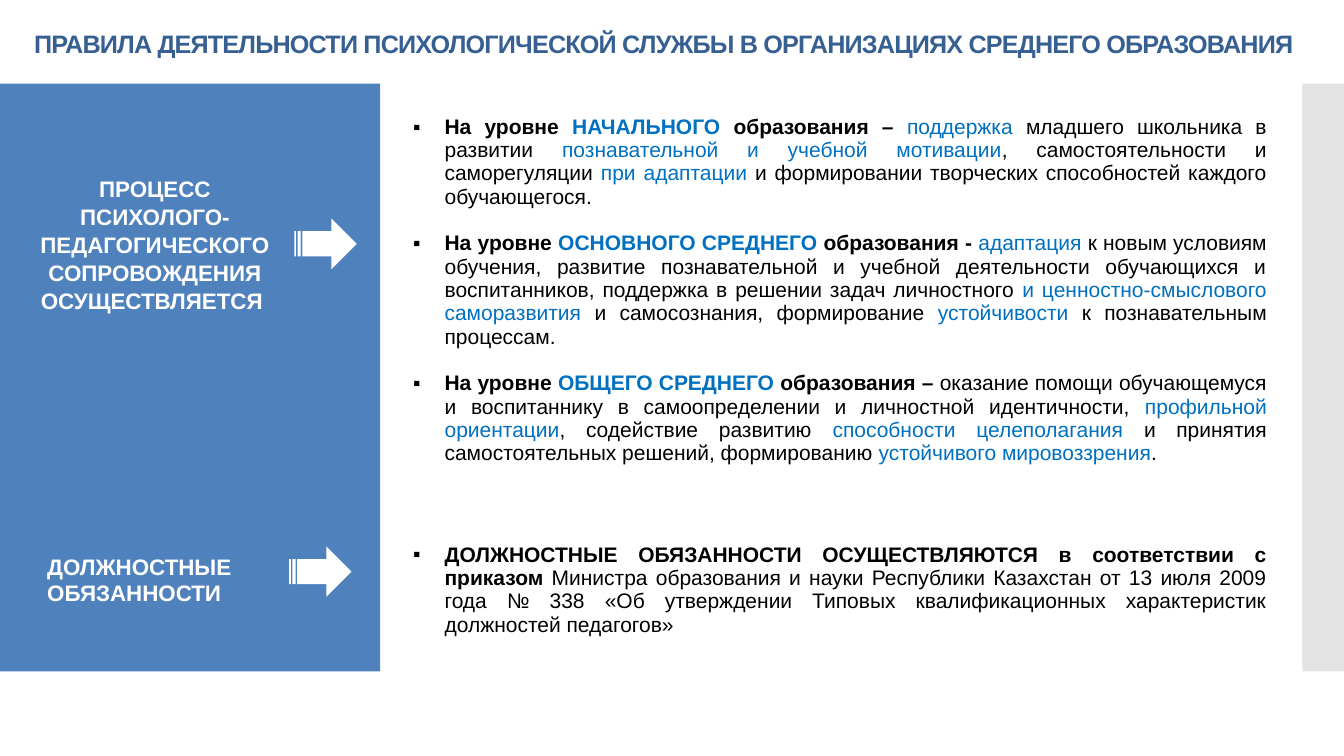
from dataclasses import dataclass

from lxml import etree
from pptx import Presentation
from pptx.dml.color import RGBColor
from pptx.enum.shapes import MSO_SHAPE
from pptx.enum.text import MSO_ANCHOR, MSO_AUTO_SIZE, PP_ALIGN
from pptx.oxml.ns import qn
from pptx.util import Cm, Pt

RECT = MSO_SHAPE.RECTANGLE
ARROW = MSO_SHAPE.STRIPED_RIGHT_ARROW
MIDDLE = MSO_ANCHOR.MIDDLE
NO_FIT = MSO_AUTO_SIZE.NONE
LEFT, CENTER, JUSTIFY = PP_ALIGN.LEFT, PP_ALIGN.CENTER, PP_ALIGN.JUSTIFY
TITLE_ONLY = 5


@dataclass(frozen=True)
class Theme:
    """Colours and type sizes of the slide."""
    font: str = "Arial"
    title: str = "376092"
    panel: str = "4F81BD"
    strip: str = "C8C8C8"
    white: str = "FFFFFF"
    ink: str = "000000"
    accent: str = "0070C0"
    title_size: float = 18
    label_size: float = 16
    body_size: float = 15


THEME = Theme()

TITLE = "ПРАВИЛА ДЕЯТЕЛЬНОСТИ ПСИХОЛОГИЧЕСКОЙ СЛУЖБЫ В ОРГАНИЗАЦИЯХ СРЕДНЕГО ОБРАЗОВАНИЯ"

LABELS = [
    ("ПРОЦЕСС ПСИХОЛОГО-ПЕДАГОГИЧЕСКОГО СОПРОВОЖДЕНИЯ ОСУЩЕСТВЛЯЕТСЯ ",
     (0.41, 1.88, 6.99, 4.32), CENTER, 1.05, (7.42, 3.4)),
    ("ДОЛЖНОСТНЫЕ ОБЯЗАННОСТИ",
     (0.94, 11.86, 5.72, 1.27), LEFT, 1.0, (7.29, 11.66)),
]

PLAIN, BLUE = (THEME.ink, False), (THEME.accent, False)
BOLD, KEY = (THEME.ink, True), (THEME.accent, True)

LEVELS = [
    [("На уровне ", BOLD), ("НАЧАЛЬНОГО", KEY), (" образования – ", BOLD),
     ("поддержка", BLUE), (" младшего школьника в развитии ", PLAIN),
     ("познавательной и учебной мотивации", BLUE),
     (", самостоятельности и саморегуляции ", PLAIN), ("при адаптации ", BLUE),
     ("и формировании творческих способностей каждого обучающегося.", PLAIN)],
    [("На уровне ", BOLD), ("ОСНОВНОГО СРЕДНЕГО ", KEY), ("образования - ", BOLD),
     ("адаптация", BLUE),
     (" к новым условиям обучения, развитие познавательной и учебной деятельности "
      "обучающихся и воспитанников, поддержка в решении задач личностного ", PLAIN),
     ("и ценностно-смыслового саморазвития ", BLUE),
     ("и самосознания, формирование ", PLAIN), ("устойчивости", BLUE),
     (" к познавательным процессам.", PLAIN)],
    [("На уровне ", BOLD), ("ОБЩЕГО СРЕДНЕГО ", KEY), ("образования – ", BOLD),
     ("оказание помощи обучающемуся и воспитаннику в самоопределении "
      "и личностной идентичности, ", PLAIN),
     ("профильной ориентации", BLUE), (", содействие развитию ", PLAIN),
     ("способности целеполагания ", BLUE),
     ("и принятия самостоятельных решений, формированию ", PLAIN),
     ("устойчивого мировоззрения", BLUE), (".", PLAIN)],
]
DUTIES = [
    [("ДОЛЖНОСТНЫЕ ОБЯЗАННОСТИ ОСУЩЕСТВЛЯЮТСЯ в соответствии с приказом ", BOLD),
     ("Министра образования и науки Республики Казахстан от 13 июля 2009 года № 338 "
      "«Об утверждении Типовых квалификационных характеристик должностей педагогов»",
      PLAIN)],
]
ROWS = [(10.31, LEVELS), (4.78, DUTIES)]


def style(run, size, color, bold):
    """Set the face, size, colour and weight of a run."""
    font = run.font
    font.name, font.size, font.bold = THEME.font, Pt(size), bold
    font.color.rgb = RGBColor.from_string(color)


def block(slide, kind, box, color):
    """Add a flat shape without line or shadow."""
    shape = slide.shapes.add_shape(kind, *map(Cm, box))
    shape.shadow.inherit = False
    shape.fill.solid()
    shape.fill.fore_color.rgb = RGBColor.from_string(color)
    shape.line.fill.background()
    return shape


def head(slide, box):
    """Place the title."""
    title = slide.shapes.title
    title.left, title.top, title.width, title.height = map(Cm, box)
    frame = title.text_frame
    frame.text = TITLE
    frame.word_wrap, frame.auto_size = True, NO_FIT
    frame.vertical_anchor = MIDDLE
    frame.margin_left = frame.margin_right = frame.margin_top = frame.margin_bottom = 0
    line = frame.paragraphs[0]
    line.alignment = CENTER
    run = line.runs[0]
    style(run, THEME.title_size, THEME.title, True)
    run.font._element.set("spc", "-60")


def side(slide, box):
    """Draw the left panel with its labels and arrows."""
    block(slide, RECT, box, THEME.panel)
    left, top = box[:2]
    for text, (x, y, wide, high), align, pitch, (tip_x, tip_y) in LABELS:
        label = block(slide, RECT, (left + x, top + y, wide, high), THEME.panel)
        frame = label.text_frame
        frame.text = text
        frame.word_wrap, frame.vertical_anchor = True, MIDDLE
        line = frame.paragraphs[0]
        line.alignment, line.line_spacing = align, pitch
        style(line.runs[0], THEME.label_size, THEME.white, True)
        block(slide, ARROW, (left + tip_x, top + tip_y, 1.57, 1.27), THEME.white)


def strip(slide, box):
    """Draw the half-clear strip at the right edge."""
    shape = block(slide, RECT, box, THEME.strip)
    color = shape._element.spPr.find(".//" + qn("a:srgbClr"))
    etree.SubElement(color, qn("a:alpha"), val="50000")


def bullet(line, parts):
    """Fill a justified paragraph with a square bullet and styled runs."""
    line.alignment = JUSTIFY
    props = line._p.get_or_add_pPr()
    props.set("marL", str(Cm(0.79)))
    props.set("indent", str(-Cm(0.79)))
    etree.SubElement(props, qn("a:buFont"), typeface=THEME.font)
    etree.SubElement(props, qn("a:buChar"), char="▪")
    for text, (color, bold) in parts:
        run = line.add_run()
        run.text = text
        style(run, THEME.body_size, color, bold)


def body(slide, box):
    """Place the table of rules."""
    table = slide.shapes.add_table(len(ROWS), 1, *map(Cm, box)).table
    table.first_row = table.horz_banding = False
    for index, (high, items) in enumerate(ROWS):
        table.rows[index].height = Cm(high)
        cell = table.cell(index, 0)
        cell.vertical_anchor = MIDDLE
        cell.fill.solid()
        cell.fill.fore_color.rgb = RGBColor.from_string(THEME.white)
        frame = cell.text_frame
        for order, parts in enumerate(items):
            line = frame.add_paragraph() if order else frame.paragraphs[0]
            if order:
                line.space_before = Pt(16.7)
            bullet(line, parts)


def main():
    """Build and save the slide."""
    deck = Presentation()
    deck.slide_width, deck.slide_height = Cm(33.87), Cm(19.05)
    slide = deck.slides.add_slide(deck.slide_layouts[TITLE_ONLY])
    head(slide, (0, 0.69, 33.45, 0.81))
    side(slide, (0, 2.11, 9.58, 14.81))
    strip(slide, (32.82, 2.11, 1.05, 14.81))
    body(slide, (10.16, 2.16, 22.02, 15.09))
    deck.save("out.pptx")


if __name__ == "__main__":
    main()
